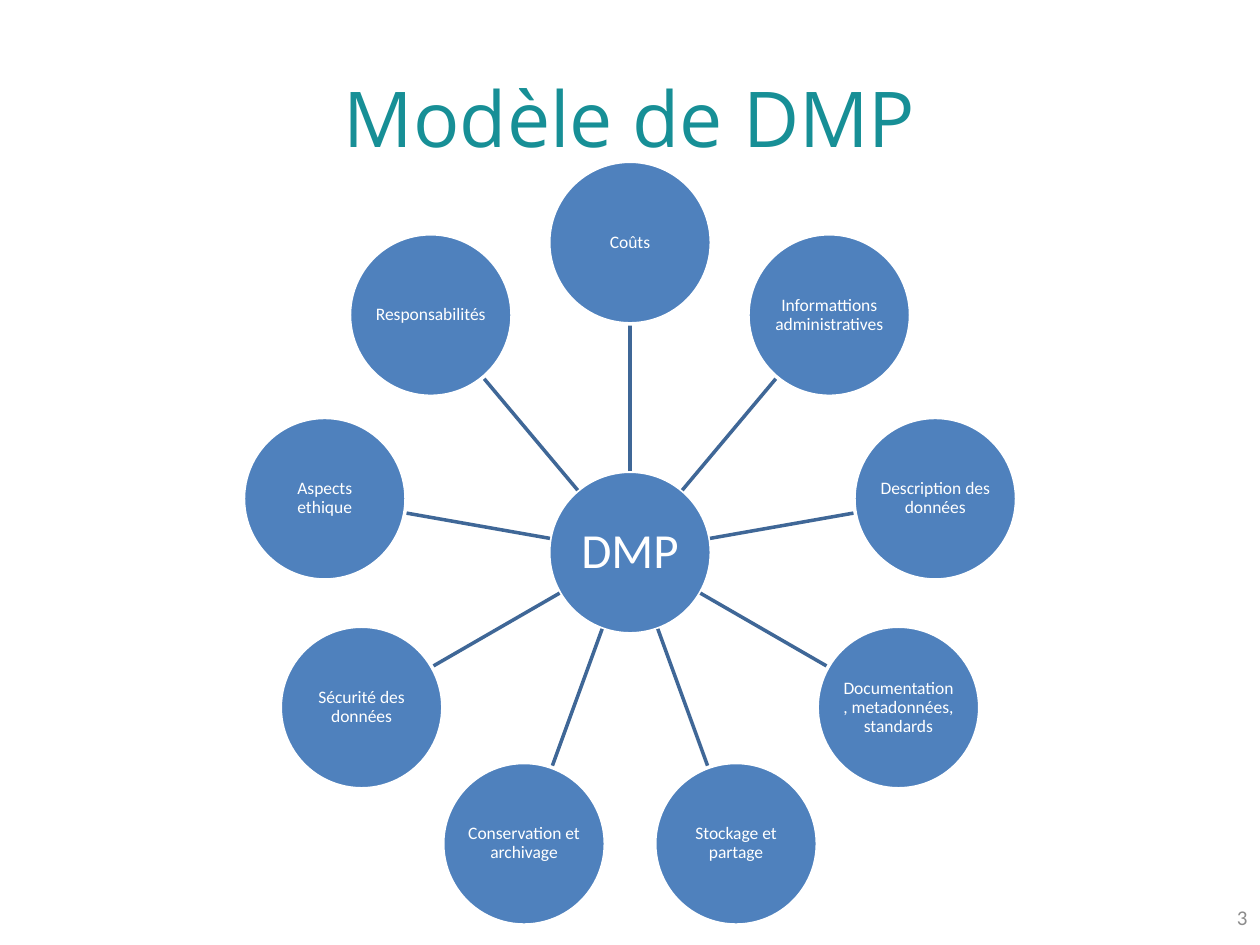
from dataclasses import dataclass
from math import cos, radians, sin

from lxml.etree import SubElement
from pptx import Presentation
from pptx.dml.color import RGBColor as Rgb
from pptx.enum.shapes import MSO_CONNECTOR as Link, MSO_SHAPE as Shape
from pptx.enum.text import MSO_ANCHOR as Anchor, PP_ALIGN as Align
from pptx.oxml.ns import qn
from pptx.slide import Slide
from pptx.text.text import TextFrame
from pptx.util import Inches, Pt


@dataclass(frozen=True)
class Theme:
    title: Rgb = Rgb(0x17, 0x8F, 0x96)
    disc: Rgb = Rgb(0x4F, 0x81, 0xBD)
    spoke: Rgb = Rgb(0x3F, 0x67, 0x97)
    white: Rgb = Rgb(0xFF, 0xFF, 0xFF)
    grey: Rgb = Rgb(0x8C, 0x8C, 0x8C)
    head: str = "Open Sans"
    body: str = "Calibri"
    head_pt: int = 44
    hub_pt: int = 28
    node_pt: int = 10
    page_pt: int = 12
    line_pt: int = 2


@dataclass(frozen=True)
class Node:
    text: str
    x: float
    y: float
    size: int
    inset: float


THEME = Theme()
MID_X, MID_Y = 5, 4.385
DISC = 1.29
RING = 2.46
TOPICS = (
    "Coûts",
    "Informattions administratives",
    "Description des données",
    "Documentation, metadonnées, standards",
    "Stockage et partage",
    "Conservation et archivage",
    "Sécurité des données",
    "Aspects ethique",
    "Responsabilités",
)


def polar(angle: float, dist: float) -> tuple[float, float]:
    return MID_X + dist * cos(angle), MID_Y + dist * sin(angle)


def write(frame: TextFrame, text: str, font: str, size: int, color: Rgb, align: Align) -> None:
    frame.text = text
    frame.word_wrap = True
    frame.vertical_anchor = Anchor.MIDDLE
    para = frame.paragraphs[0]
    para.alignment = align
    style = para.runs[0].font
    style.name, style.size = font, Pt(size)
    style.color.rgb = color


def draw_node(slide: Slide, node: Node) -> None:
    disc = slide.shapes.add_shape(
        Shape.OVAL, Inches(node.x - DISC / 2), Inches(node.y - DISC / 2), Inches(DISC), Inches(DISC)
    )
    disc.shadow.inherit = False
    disc.fill.solid()
    disc.fill.fore_color.rgb = THEME.disc
    disc.line.color.rgb = THEME.white
    disc.line.width = Pt(THEME.line_pt)
    frame = disc.text_frame
    write(frame, node.text, THEME.body, node.size, THEME.white, Align.CENTER)
    frame.paragraphs[0].line_spacing = 0.9
    frame.margin_left = frame.margin_right = Inches(node.inset)
    frame.margin_top = frame.margin_bottom = Inches(node.inset)


def draw_spoke(slide: Slide, angle: float) -> None:
    ends = (*polar(angle, DISC / 2), *polar(angle, RING - DISC / 2))
    spoke = slide.shapes.add_connector(Link.STRAIGHT, *map(Inches, ends))
    spoke.line.color.rgb = THEME.spoke
    spoke.line.width = Pt(THEME.line_pt)
    SubElement(spoke._element.spPr, qn("a:effectLst"))


def main() -> None:
    """Build the hub-and-spoke slide of the DMP model."""
    deck = Presentation()
    deck.slide_width, deck.slide_height = Inches(10), Inches(7.5)
    slide = deck.slides.add_slide(deck.slide_layouts[5])

    title = slide.shapes.title
    title.left, title.top = Inches(0.5), Inches(0.3)
    title.width, title.height = Inches(9), Inches(1.25)
    write(title.text_frame, "Modèle de DMP", THEME.head, THEME.head_pt, THEME.title, Align.CENTER)

    draw_node(slide, Node("DMP", MID_X, MID_Y, THEME.hub_pt, 0.02))
    for i, topic in enumerate(TOPICS):
        angle = radians(360 / len(TOPICS) * i - 90)
        draw_spoke(slide, angle)
        draw_node(slide, Node(topic, *polar(angle, RING), THEME.node_pt, 0.01))

    page = slide.shapes.add_textbox(Inches(7.75), Inches(7.08), Inches(2.25), Inches(0.4))
    write(page.text_frame, "3", THEME.body, THEME.page_pt, THEME.grey, Align.RIGHT)

    deck.save("out.pptx")


if __name__ == "__main__":
    main()
